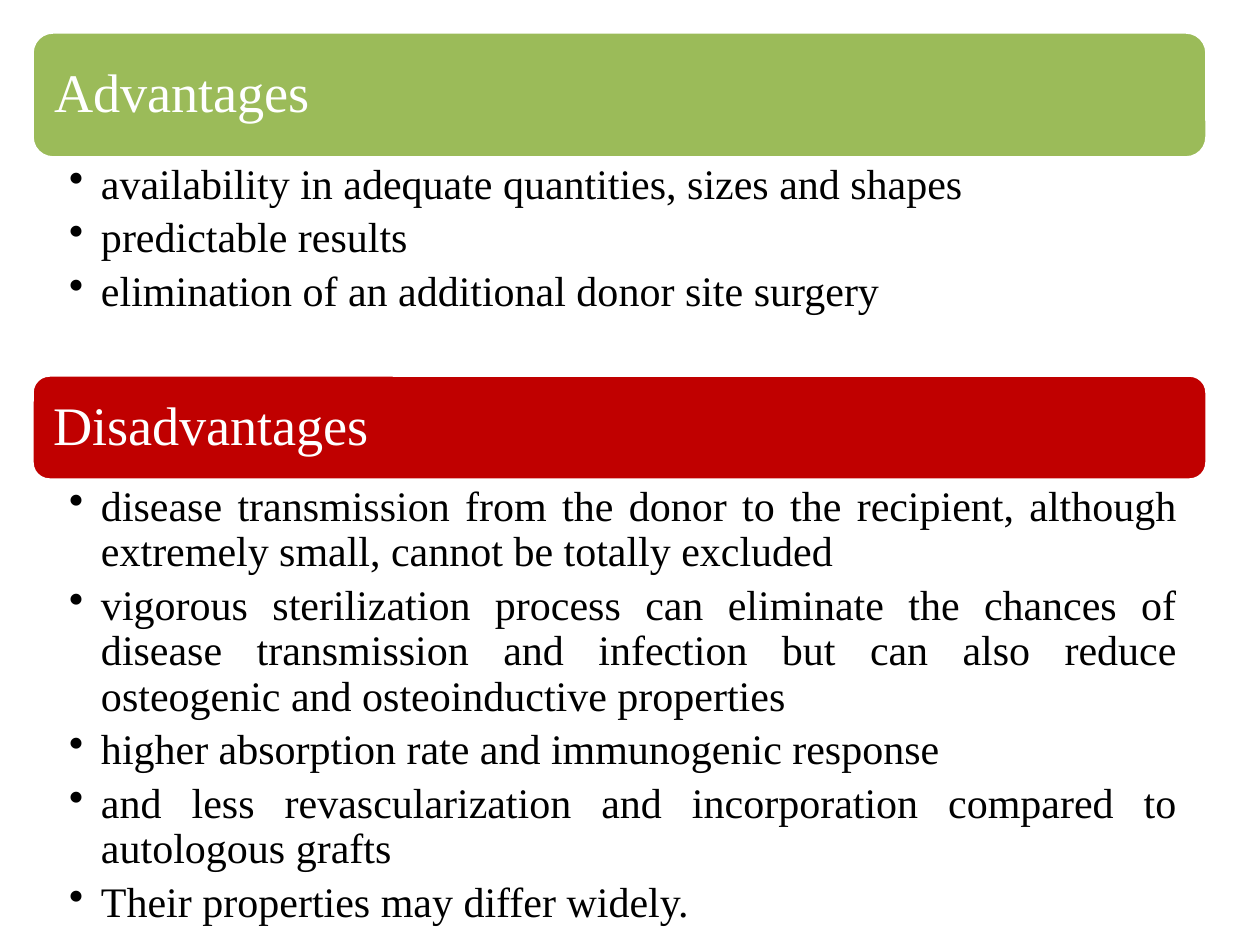
from lxml.etree import SubElement
from pptx import Presentation
from pptx.dml.color import RGBColor
from pptx.enum.shapes import MSO_SHAPE
from pptx.enum.text import MSO_ANCHOR, PP_ALIGN
from pptx.oxml.ns import qn
from pptx.util import Emu, Pt

LEFT, WIDTH = 32, 1175
SECTIONS = [
    ("Advantages", "9BBB59", 32, 126, 217, PP_ALIGN.LEFT, [
        "availability in adequate quantities, sizes and shapes",
        "predictable results",
        "elimination of an additional donor site surgery",
    ]),
    ("Disadvantages", "C00000", 375, 105, 445, PP_ALIGN.JUSTIFY, [
        "disease transmission from the donor to the recipient, although "
        "extremely small, cannot be totally excluded",
        "vigorous sterilization process can eliminate the chances of disease "
        "transmission and infection but can also reduce osteogenic and "
        "osteoinductive properties",
        "higher absorption rate and immunogenic response",
        "and less revascularization and incorporation compared to autologous grafts",
        "Their properties may differ widely.",
    ]),
]


def px(n):
    return Emu(round(n * 914400 / 126))


def rgb(value):
    return RGBColor.from_string(value)


def set_frame(tf, anchor, left, top, right, bottom):
    margins = {"margin_left": left, "margin_top": top,
               "margin_right": right, "margin_bottom": bottom}
    for name, value in margins.items():
        setattr(tf, name, px(value))
    tf.word_wrap = True
    tf.vertical_anchor = anchor


def write(p, text, size, color, align):
    p.alignment = align
    p.line_spacing = 0.9
    r = p.add_run()
    r.text = text
    for name, value in {"name": "Times New Roman", "size": Pt(size)}.items():
        setattr(r.font, name, value)
    r.font.color.rgb = rgb(color)


def add_bullet(p):
    p.level = 1
    p.space_after = Pt(4.8)
    pPr = p._p.get_or_add_pPr()
    pPr.set("marL", str(px(32)))
    pPr.set("indent", str(-px(32)))
    SubElement(pPr, qn("a:buChar"), char="•")


def add_header(slide, title, color, top, height):
    s = slide.shapes.add_shape(MSO_SHAPE.ROUNDED_RECTANGLE,
                               px(LEFT), px(top), px(WIDTH), px(height))
    s.shadow.inherit = False
    s.fill.solid()
    s.fill.fore_color.rgb = rgb(color)
    s.line.color.rgb = rgb("FFFFFF")
    s.line.width = Pt(2)
    set_frame(s.text_frame, MSO_ANCHOR.MIDDLE, 16, 16, 16, 16)
    write(s.text_frame.paragraphs[0], title, 31, "FFFFFF", PP_ALIGN.LEFT)


def add_list(slide, items, top, height, align):
    tf = slide.shapes.add_textbox(px(LEFT), px(top), px(WIDTH), px(height)).text_frame
    set_frame(tf, MSO_ANCHOR.TOP, 37, 5, 30, 5)
    for i, item in enumerate(items):
        p = tf.add_paragraph() if i else tf.paragraphs[0]
        write(p, item, 24, "000000", align)
        add_bullet(p)


def main():
    prs = Presentation()
    prs.slide_width, prs.slide_height = px(1260), px(945)
    slide = prs.slides.add_slide(prs.slide_layouts[6])
    for title, color, top, header_height, list_height, align, items in SECTIONS:
        add_header(slide, title, color, top, header_height)
        add_list(slide, items, top + header_height, list_height, align)
    prs.save("out.pptx")


if __name__ == "__main__":
    main()
